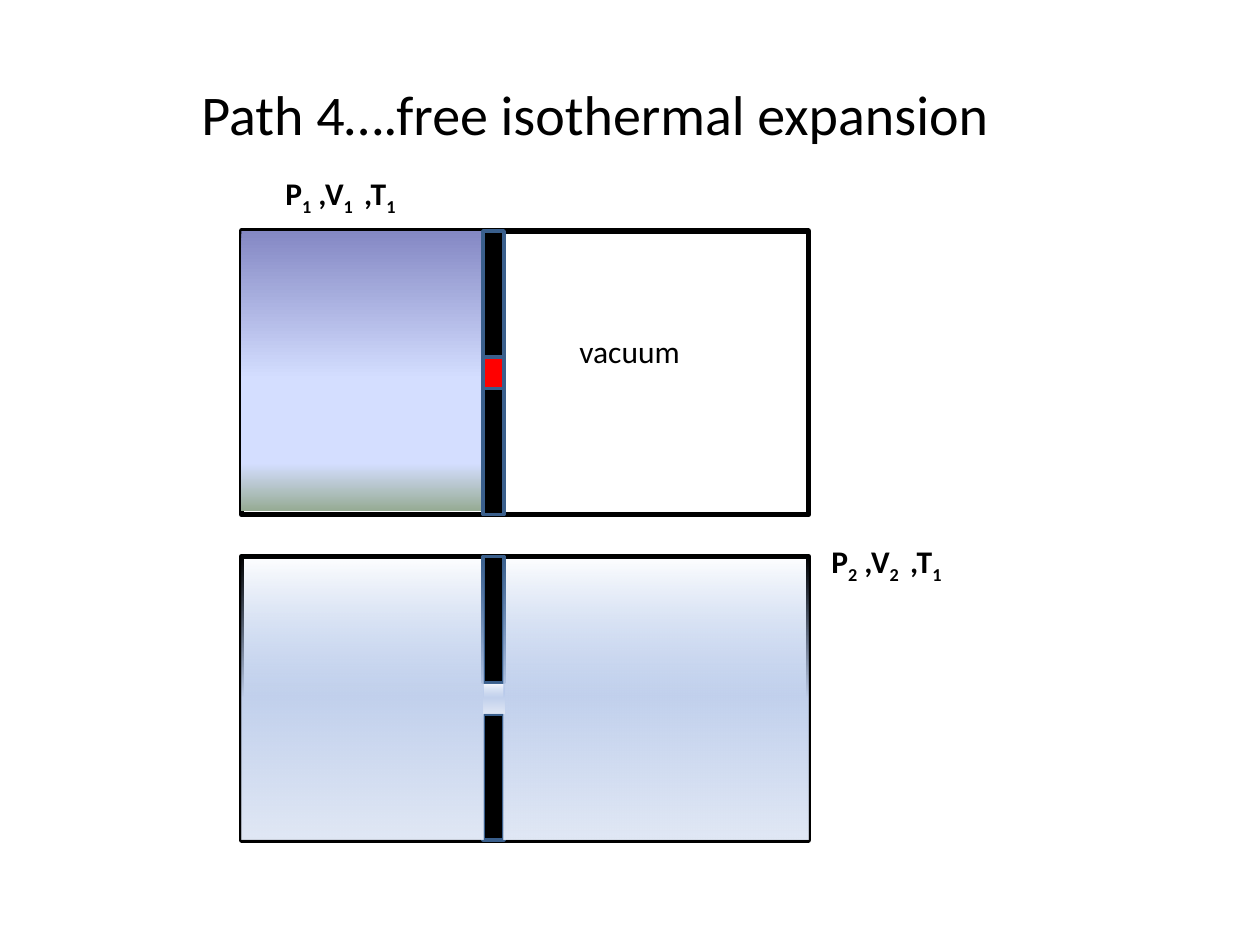
from dataclasses import dataclass

from lxml.etree import SubElement
from pptx import Presentation
from pptx.dml.color import RGBColor
from pptx.enum.shapes import MSO_CONNECTOR, MSO_SHAPE
from pptx.enum.text import MSO_AUTO_SIZE
from pptx.oxml.ns import qn
from pptx.util import Pt


@dataclass(frozen=True)
class Theme:
    font: str = "Calibri"
    title_size: int = 32
    label_size: int = 18
    ink: str = "000000"
    wall_line: str = "3A5F8C"
    plug: str = "FF0000"
    # Gradient stops: position in percent, colour, opacity in percent
    dense_gas: tuple = ((0, "8488C4", 100), (53, "D4DEFF", 100),
                        (83, "D4DEFF", 100), (100, "96AB94", 100))
    thin_gas: tuple = ((0, "9AB5E4", 0), (50, "C2D1ED", 100), (100, "E1E8F5", 100))


THEME = Theme()
WALL_OFFSET, WALL_WIDTH, WALL_HEIGHT = 138, 12, 72
GATE_HEIGHT = 18


def set_gradient(fill, stops):
    """Fill from top to bottom with any number of stops."""
    fill.gradient()
    fill.gradient_angle = 270
    stop_list = fill._xPr.find(qn("a:gradFill")).find(qn("a:gsLst"))
    for old_stop in list(stop_list):
        stop_list.remove(old_stop)
    for position, color, opacity in stops:
        stop = SubElement(stop_list, qn("a:gs"), pos=str(position * 1000))
        value = SubElement(stop, qn("a:srgbClr"), val=color)
        if opacity < 100:
            SubElement(value, qn("a:alpha"), val=str(opacity * 1000))


def add_rectangle(page, box, fill=None, line=None, width=0):
    """Fill is None, a colour, or a tuple of gradient stops."""
    shape = page.shapes.add_shape(MSO_SHAPE.RECTANGLE, *map(Pt, box))
    shape.shadow.inherit = False
    if fill is None:
        shape.fill.background()
    elif isinstance(fill, tuple):
        set_gradient(shape.fill, fill)
    else:
        shape.fill.solid()
        shape.fill.fore_color.rgb = RGBColor.from_string(fill)
    if line is None:
        shape.line.fill.background()
    else:
        shape.line.color.rgb = RGBColor.from_string(line)
        shape.line.width = Pt(width)


def add_line(page, start, end):
    line = page.shapes.add_connector(MSO_CONNECTOR.STRAIGHT, *map(Pt, start + end))
    line.line.color.rgb = RGBColor.from_string(THEME.ink)
    line.line.width = Pt(2.75)
    SubElement(line._element.spPr, qn("a:effectLst"))


def add_text(page, box, parts, size, bold=False):
    """Write the parts in one paragraph; every second part is a subscript."""
    frame = page.shapes.add_textbox(*map(Pt, box)).text_frame
    frame.word_wrap = True
    frame.auto_size = MSO_AUTO_SIZE.SHAPE_TO_FIT_TEXT
    para = frame.paragraphs[0]
    formats = {"name": THEME.font, "size": Pt(size), "bold": bold}
    for index, part in enumerate(parts):
        span = para.add_run()
        span.text = part
        for name, value in formats.items():
            setattr(span.font, name, value)
        span.font.color.rgb = RGBColor.from_string(THEME.ink)
        if index % 2:
            span._r.get_or_add_rPr().set("baseline", "-25000")


def add_state_label(page, box, state):
    parts = ["P", state, " ,V", f"{state} ", " ,T", "1"]
    add_text(page, box, parts, THEME.label_size, bold=True)


def add_container(page, box):
    add_rectangle(page, box, line=THEME.ink, width=3.25)


def wall_parts(box):
    """Return the upper wall, the lower wall and the gate between them."""
    left, top, _, height = box
    left += WALL_OFFSET
    upper = (left, top, WALL_WIDTH, WALL_HEIGHT)
    lower = (left, top + height - WALL_HEIGHT, WALL_WIDTH, WALL_HEIGHT)
    gate = (left, top + WALL_HEIGHT, WALL_WIDTH, GATE_HEIGHT)
    return upper, lower, gate


def add_wall_part(page, box, fill=THEME.ink):
    add_rectangle(page, box, fill, THEME.wall_line, 2)


def add_closed_chamber(page, box):
    left, top, _, height = box
    upper, lower, gate = wall_parts(box)
    edge = left + WALL_OFFSET + WALL_WIDTH
    add_container(page, box)
    for start, end in ((0, 66), (height - 66, height)):
        add_line(page, (edge, top + start), (edge, top + end))
    add_rectangle(page, (left, top, WALL_OFFSET, height - 2), THEME.dense_gas)
    for part in (upper, lower):
        add_wall_part(page, part)
    add_wall_part(page, gate, THEME.plug)


def add_open_chamber(page, box):
    left, top, width, height = box
    upper, lower, gate = wall_parts(box)
    right_start = WALL_OFFSET + WALL_WIDTH
    add_container(page, box)
    for part in (upper, lower):
        add_wall_part(page, part)
    left_gas = (left, top, WALL_OFFSET, height)
    right_gas = (left + right_start, top, width - right_start, height)
    for region in (left_gas, right_gas, gate):
        add_rectangle(page, region, THEME.thin_gas)


def main():
    deck = Presentation()
    deck.slide_width, deck.slide_height = Pt(720), Pt(540)
    page = deck.slides.add_slide(deck.slide_layouts[6])
    add_text(page, (108, 42, 480, 46), ["Path 4….free isothermal expansion"],
             THEME.title_size)
    add_closed_chamber(page, (138, 132, 324, 162))
    add_state_label(page, (156, 96, 102, 29), "1")
    add_open_chamber(page, (138, 318, 324, 162))
    add_state_label(page, (468, 306, 102, 29), "2")
    add_text(page, (324, 186, 84, 29), ["vacuum"], THEME.label_size)
    deck.save("out.pptx")


if __name__ == "__main__":
    main()
